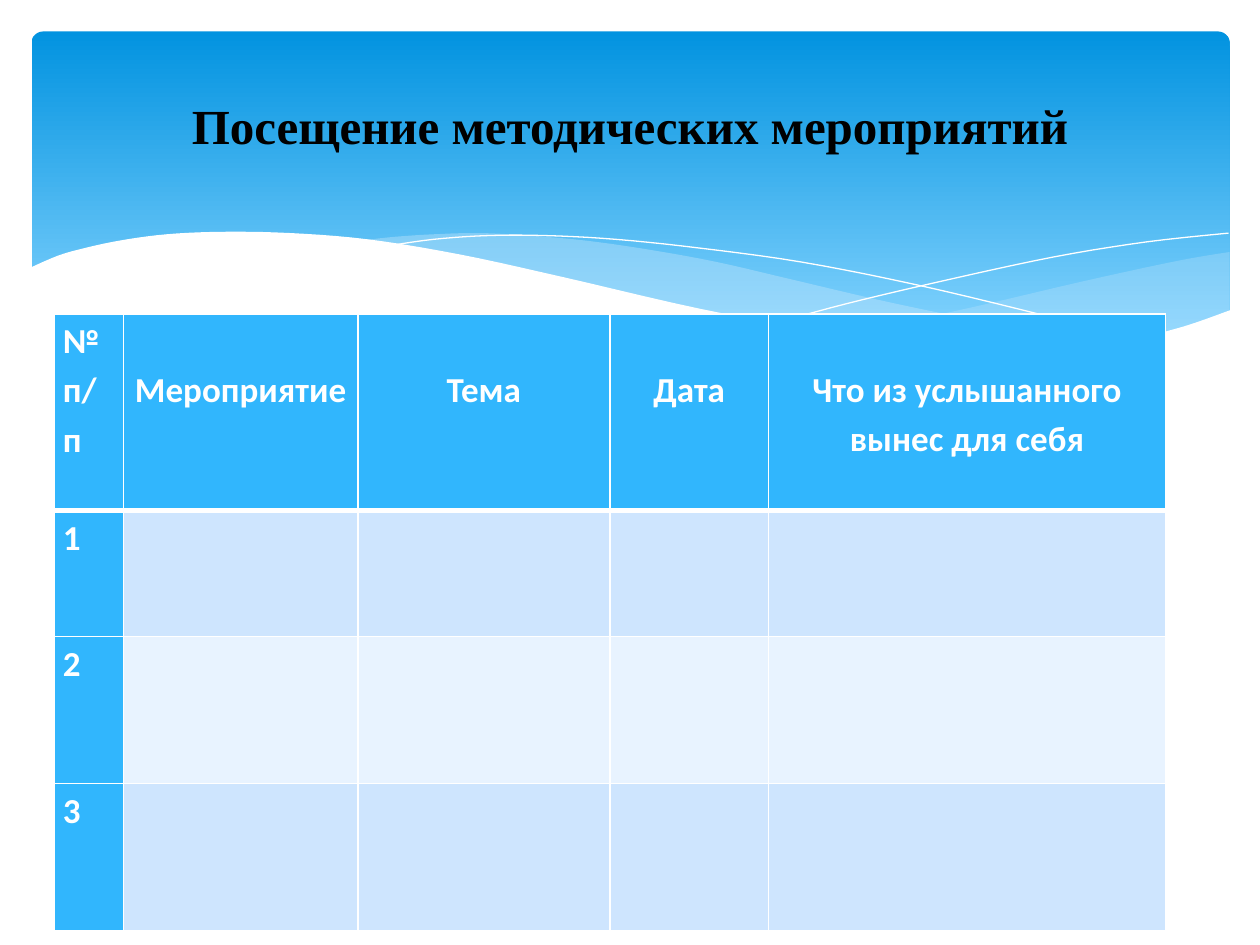
import pptx
import pptx.dml.color
import pptx.enum.shapes
import pptx.enum.text
import pptx.oxml.ns
import pptx.util
import lxml.etree

COLUMNS, ROWS = 100, 75
ALIGN = pptx.enum.text.PP_ALIGN
ANCHOR = pptx.enum.text.MSO_ANCHOR

HEADERS = ["№\nп/п", "Мероприятие", "Тема", "Дата", "Что из услышанного вынес для себя"]
NUMBERS = ["1", "2", "3"]
COLUMN_WIDTHS = [5.5, 18.6, 20, 12.6, 31.5]
ROW_HEIGHTS = [15.6, 10, 11.7, 11.7]

RIGHT_VEIL = [
    [(97.6, 20), (93.5, 20.7), (86.1, 22.3), (75.3, 24.8), (66.1, 26.5)],
    [(66.1, 26.5), (71.9, 27.2), (76.9, 27.7), (81.4, 27.8), (86.3, 27.5), (91.3, 26.7), (94.9, 25.7), (97.6, 24.7)],
]
LEFT_VEIL = [
    [(89.3, 27.3), (83.7, 26.5), (77.5, 25.4), (70.6, 24), (62.9, 22.2), (56.9, 20.8), (51.4, 19.8),
     (46.5, 19.1), (42, 18.7), (38, 18.5), (34.4, 18.6), (31.3, 18.8), (28.6, 19.1)],
    [(28.6, 19.1), (34.2, 19.9), (40.4, 21.1), (44.9, 22.2), (53, 24), (60.1, 25.5), (66.5, 26.6),
     (72.2, 27.4), (77.3, 27.7), (81.8, 27.8), (85.7, 27.7), (89.3, 27.3)],
]
FALLING_CURVE = [[(30.9, 19.5), (34.4, 19), (38.7, 18.7), (43.3, 18.7), (48.9, 19), (55.6, 19.7),
                  (63.6, 20.8), (72.7, 22.6), (83.1, 25.1), (90.7, 27.2)]]
RISING_CURVE = [[(61.3, 25.7), (67.2, 24.1), (74.8, 22.3), (83.6, 20.4), (91, 19.2), (97.5, 18.5)]]
WHITE_WAVE = [
    [(97.7, 24.6), (94, 25.9), (89.9, 26.9), (85, 27.5), (79.3, 27.6), (72.6, 27.2), (64.8, 26.2),
     (55.5, 24.5), (44.7, 22), (36.5, 20.2), (29.2, 19), (23, 18.5), (17.7, 18.4), (13.2, 18.6),
     (9.5, 19.1), (6.7, 19.7), (4.6, 20.3), (2.3, 21.3)],
    [(2.3, 32.9), (97.7, 32.9)],
]


def color(hex_string):
    """Turn a hex string into a colour value."""
    return pptx.dml.color.RGBColor.from_string(hex_string)


def assign(target, values):
    """Set attributes of an object from a dict."""
    for name, value in values.items():
        setattr(target, name, value)


def smooth(points, steps=5):
    """Pass a Catmull-Rom curve through the points."""
    padded = [points[0], *points, points[-1]]
    curve = [points[0]]
    for a, b, c, d in zip(padded, padded[1:], padded[2:], padded[3:]):
        for step in range(1, steps + 1):
            t = step / steps
            curve.append(tuple(
                0.5 * (2 * q + (r - p) * t + (2 * p - 5 * q + 4 * r - s) * t**2 + (3 * q - p - 3 * r + s) * t**3)
                for p, q, r, s in zip(a, b, c, d)))
    return curve


class Deck:
    """Holds the style and the current slide."""

    title_font = {"name": "Times New Roman", "size": pptx.util.Pt(28), "bold": True}
    table_font = {"name": "Calibri", "size": pptx.util.Pt(20), "bold": True}
    accent, bands, white = "31B6FD", ["E8F3FF", "CEE5FE"], "FFFFFF"

    def __init__(self, presentation):
        """Add the slide to the presentation."""
        self.column = presentation.slide_width / COLUMNS
        self.row = presentation.slide_height / ROWS
        self.slide = presentation.slides.add_slide(presentation.slide_layouts[5])

    def place(self, left, top, width, height):
        """Turn grid units into a position and size."""
        return [round(value * unit) for value, unit in
                zip((left, top, width, height), (self.column, self.row) * 2)]

    def format_text(self, paragraph, text, font, hex_string, alignment):
        """Fill and format one paragraph."""
        paragraph.text = text
        assign(paragraph, {"alignment": alignment, "line_spacing": 1.15})
        assign(paragraph.font, font)
        paragraph.font.color.rgb = color(hex_string)

    def banner(self, box, stops, radius):
        """Draw a rounded panel with a vertical gradient."""
        kind = pptx.enum.shapes.MSO_SHAPE.ROUNDED_RECTANGLE
        shape = self.slide.shapes.add_shape(kind, *self.place(*box))
        shape.adjustments[0] = radius
        shape.shadow.inherit = False
        shape.line.fill.background()
        shape.fill.gradient()
        shape.fill.gradient_angle = 270
        for stop, (position, hex_string) in zip(shape.fill.gradient_stops, stops):
            stop.position = position
            stop.color.rgb = color(hex_string)

    def wave(self, edges, fill=None, opacity=100):
        """Draw smooth edges as a filled area, or as a hairline without fill."""
        points = [(x * self.column, y * self.row) for edge in edges for x, y in smooth(edge)]
        builder = self.slide.shapes.build_freeform(*points[0], scale=1.0)
        builder.add_line_segments(points[1:], close=fill is not None)
        shape = builder.convert_to_shape()
        shape.shadow.inherit = False
        if fill is None:
            shape.fill.background()
            shape.line.color.rgb = color(self.white)
            shape.line.width = pptx.util.Pt(0)
            return
        shape.line.fill.background()
        shape.fill.solid()
        shape.fill.fore_color.rgb = color(fill)
        value = shape._element.spPr.find(".//" + pptx.oxml.ns.qn("a:srgbClr"))
        lxml.etree.SubElement(value, pptx.oxml.ns.qn("a:alpha"), val=str(opacity * 1000))

    def title(self, text, box):
        """Move and fill the title placeholder in front of the backdrop."""
        shape = self.slide.shapes.title
        assign(shape, dict(zip(("left", "top", "width", "height"), self.place(*box))))
        assign(shape.text_frame, {"vertical_anchor": ANCHOR.MIDDLE, "word_wrap": True})
        self.format_text(shape.text_frame.paragraphs[0], text, self.title_font, "000000", ALIGN.CENTER)
        self.slide.shapes._spTree.append(shape._element)

    def border(self, cell, side, points):
        """Add one white border to a cell."""
        qualify = pptx.oxml.ns.qn
        properties = cell._tc.get_or_add_tcPr()
        line = lxml.etree.SubElement(properties, qualify("a:ln" + side), w=str(pptx.util.Pt(points)))
        fill = lxml.etree.SubElement(line, qualify("a:solidFill"))
        lxml.etree.SubElement(fill, qualify("a:srgbClr"), val=self.white)

    def cell(self, cell, text, row, column):
        """Fill and format one table cell."""
        for side in "LRTB":
            under_header = (row, side) in ((0, "B"), (1, "T"))
            self.border(cell, side, 3 if under_header else 1)
        centred = row == 0 and column > 0
        margin = pptx.util.Inches(0.07)
        assign(cell, {"margin_left": margin, "margin_right": margin, "margin_bottom": 0,
                      "margin_top": round(3.9 * self.row) if centred else 0})
        cell.fill.solid()
        cell.fill.fore_color.rgb = color(self.accent if row == 0 or column == 0 else self.bands[row % 2])
        cell.text = text
        for paragraph in cell.text_frame.paragraphs:
            self.format_text(paragraph, paragraph.text, self.table_font, self.white,
                             ALIGN.CENTER if centred else ALIGN.LEFT)

    def table(self, corner, widths, heights, texts):
        """Add a table with a header row and a header column."""
        box = self.place(*corner, sum(widths), sum(heights))
        table = self.slide.shapes.add_table(len(heights), len(widths), *box).table
        for column, width in zip(table.columns, widths):
            column.width = round(width * self.column)
        for row, height in zip(table.rows, heights):
            row.height = round(height * self.row)
        for row, line in enumerate(texts):
            for column, text in enumerate(line):
                self.cell(table.cell(row, column), text, row, column)


def main():
    """Build the slide and save it."""
    presentation = pptx.Presentation()
    assign(presentation, {"slide_width": pptx.util.Inches(10), "slide_height": pptx.util.Inches(7.5)})
    deck = Deck(presentation)
    deck.banner((2.5, 2.5, 95.1, 27), [(0, "0293E0"), (0.9, "83D3FE")], 0.034)
    deck.wave(RIGHT_VEIL, "C6E7FC", 29)
    deck.wave(LEFT_VEIL, "C6E7FC", 40)
    deck.wave(FALLING_CURVE)
    deck.wave(RISING_CURVE)
    deck.wave(WHITE_WAVE, deck.white)
    blanks = [""] * (len(HEADERS) - 1)
    deck.table((4.3, 24.9), COLUMN_WIDTHS, ROW_HEIGHTS, [HEADERS] + [[number, *blanks] for number in NUMBERS])
    deck.title("Посещение методических мероприятий", (5, 3.7, 90, 11.8))
    presentation.save("out.pptx")


if __name__ == "__main__":
    main()
